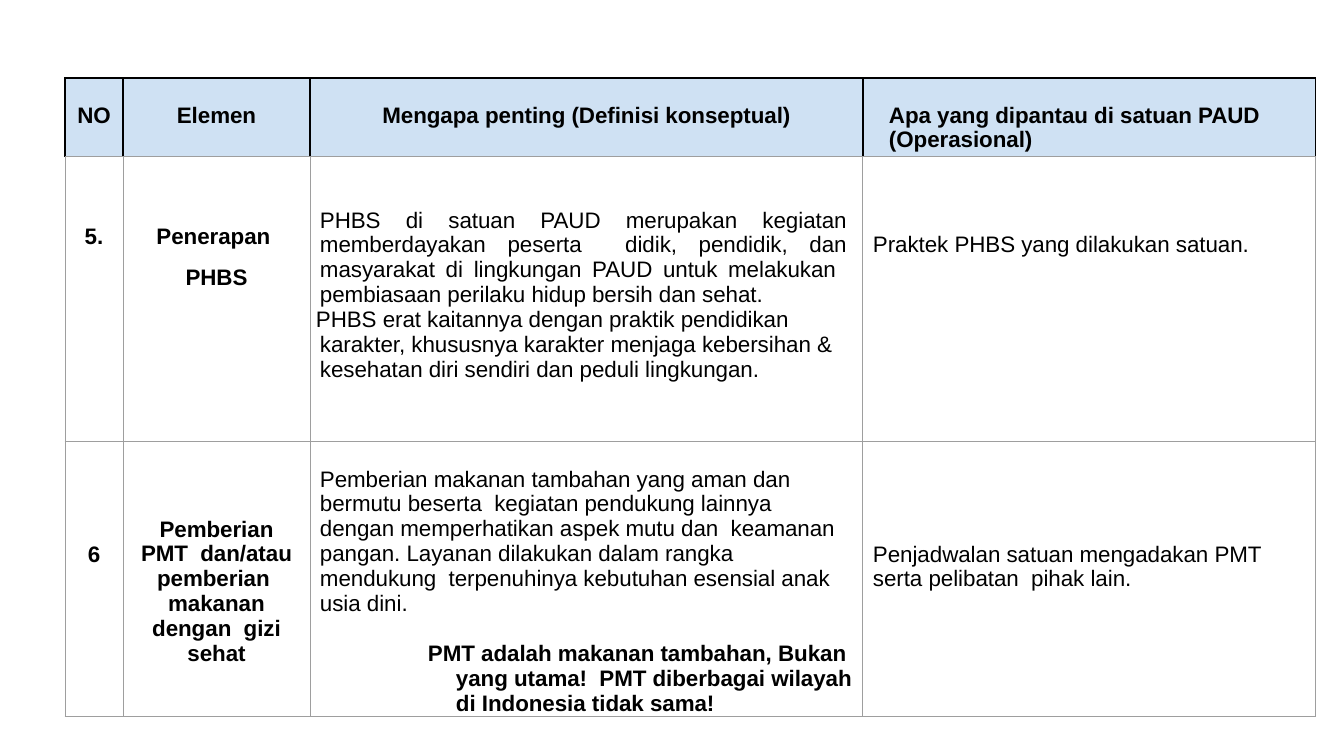
from dataclasses import dataclass

from lxml.etree import SubElement
from pptx import Presentation
from pptx.dml.color import RGBColor as Rgb
from pptx.enum.text import PP_ALIGN as Align
from pptx.oxml.ns import qn
from pptx.table import _Cell as Cell
from pptx.util import Emu, Pt

SCALE = 914400 / 100.8
Edges = dict[str, tuple[str, float] | None]


@dataclass(frozen=True)
class Theme:
    font: str = "Arial"
    size: int = 16
    track: int = -3
    ink: str = "000000"
    head: str = "CFE1F3"
    line: str = "9E9E9E"


@dataclass(frozen=True)
class Para:
    """Indents are in px, the space before in points."""
    text: str
    align: Align = Align.LEFT
    bold: bool = False
    left: int = 0
    first: int = 0
    right: int = 0
    before: float = 0


@dataclass(frozen=True)
class Entry:
    top: int
    paras: tuple[Para, ...]


@dataclass(frozen=True)
class Row:
    height: int
    fill: str | None
    edges: Edges
    cells: tuple[Entry, ...]


THEME = Theme()
DARK, GREY = (THEME.ink, 1), (THEME.line, 0.75)
SPAN: Edges = {"lnL": None, "lnR": None, "lnT": None, "lnB": DARK}
HEAD: Edges = {"lnL": DARK, "lnR": DARK, "lnT": DARK, "lnB": GREY}
BODY: Edges = dict.fromkeys(HEAD, GREY)
COLS = (58, 187, 553, 453)
LEFT, TOP = 65, -36


def title(text: str, before: float = 0, side: int = 0) -> Para:
    """Bold centred paragraph."""
    return Para(text, Align.CENTER, True, left=side, right=side, before=before)


ROWS = (
    Row(114, None, SPAN, ()),
    Row(79, THEME.head, HEAD, (
        Entry(25, (title("NO"),)),
        Entry(25, (title("Elemen"),)),
        Entry(25, (title("Mengapa penting (Definisi konseptual)"),)),
        Entry(25, (Para("Apa yang dipantau di satuan PAUD (Operasional)",
                        bold=True, left=26),)),
    )),
    Row(285, None, BODY, (
        Entry(67, (title("5."),)),
        Entry(67, (title("Penerapan "), title("PHBS", 11.6))),
        Entry(51, (
            Para("PHBS di satuan PAUD merupakan kegiatan memberdayakan "
                 "peserta  didik, pendidik, dan masyarakat di lingkungan PAUD "
                 "untuk melakukan  pembiasaan perilaku hidup bersih dan sehat.",
                 Align.JUSTIFY, left=10, right=16),
            Para("PHBS erat kaitannya dengan praktik pendidikan  karakter, "
                 "khususnya karakter menjaga kebersihan & kesehatan diri "
                 "sendiri dan peduli lingkungan.", left=10, first=-4),
        )),
        Entry(75, (Para("Praktek PHBS yang dilakukan satuan.",
                        Align.JUSTIFY, left=10),)),
    )),
    Row(274, None, BODY, (
        Entry(100, (title("6"),)),
        Entry(75, (title("Pemberian PMT  dan/atau pemberian  makanan "
                         "dengan  gizi sehat", side=12),)),
        Entry(25, (
            Para("Pemberian makanan tambahan yang aman dan bermutu beserta  "
                 "kegiatan pendukung lainnya dengan memperhatikan aspek mutu "
                 "dan  keamanan pangan. Layanan dilakukan dalam rangka "
                 "mendukung  terpenuhinya kebutuhan esensial anak usia dini.",
                 left=10, right=25),
            Para("PMT adalah makanan tambahan, Bukan yang utama!  PMT "
                 "diberbagai wilayah di Indonesia tidak sama!",
                 bold=True, left=146, first=-28, before=18),
        )),
        Entry(100, (Para("Penjadwalan satuan mengadakan PMT serta "
                         "pelibatan  pihak lain.", left=10),)),
    )),
)


def px(num: int) -> Emu:
    return Emu(round(num * SCALE))


def border(cell: Cell, edges: Edges) -> None:
    props = cell._tc.get_or_add_tcPr()
    for tag, edge in edges.items():
        line = SubElement(props, qn(f"a:{tag}"))
        if edge is None:
            SubElement(line, qn("a:noFill"))
            continue
        color, width = edge
        line.set("w", str(Pt(width)))
        fill = SubElement(line, qn("a:solidFill"))
        SubElement(fill, qn("a:srgbClr"), val=color)


def paint(cell: Cell, color: str | None) -> None:
    if color is None:
        cell.fill.background()
    else:
        cell.fill.solid()
        cell.fill.fore_color.rgb = Rgb.from_string(color)


def write(cell: Cell, entry: Entry) -> None:
    cell.margin_left = cell.margin_right = cell.margin_bottom = 0
    cell.margin_top = px(entry.top)
    frame = cell.text_frame
    frame.text = "\n".join(item.text for item in entry.paras)
    for para, item in zip(frame.paragraphs, entry.paras):
        para.alignment = item.align
        para.space_before = Pt(item.before)
        props = para._p.get_or_add_pPr()
        props.set("marL", str(px(item.left)))
        props.set("marR", str(px(item.right)))
        props.set("indent", str(px(item.first)))
        for run in para.runs:
            font = run.font
            font.name, font.size = THEME.font, Pt(THEME.size)
            font.bold = item.bold
            font.color.rgb = Rgb.from_string(THEME.ink)
            run._r.get_or_add_rPr().set("spc", str(THEME.track))


def main() -> None:
    deck = Presentation()
    deck.slide_width, deck.slide_height = px(1344), px(756)
    slide = deck.slides.add_slide(deck.slide_layouts[6])
    high = sum(row.height for row in ROWS)
    table = slide.shapes.add_table(len(ROWS), len(COLS), px(LEFT), px(TOP),
                                   px(sum(COLS)), px(high)).table
    table.first_row = table.horz_banding = False
    table.cell(0, 0).merge(table.cell(0, len(COLS) - 1))
    for col, width in zip(table.columns, COLS):
        col.width = px(width)
    for line, row in zip(table.rows, ROWS):
        line.height = px(row.height)
        for cell in line.cells:
            border(cell, row.edges)
            paint(cell, row.fill)
        for cell, entry in zip(line.cells, row.cells):
            write(cell, entry)
    deck.save("out.pptx")


if __name__ == "__main__":
    main()
